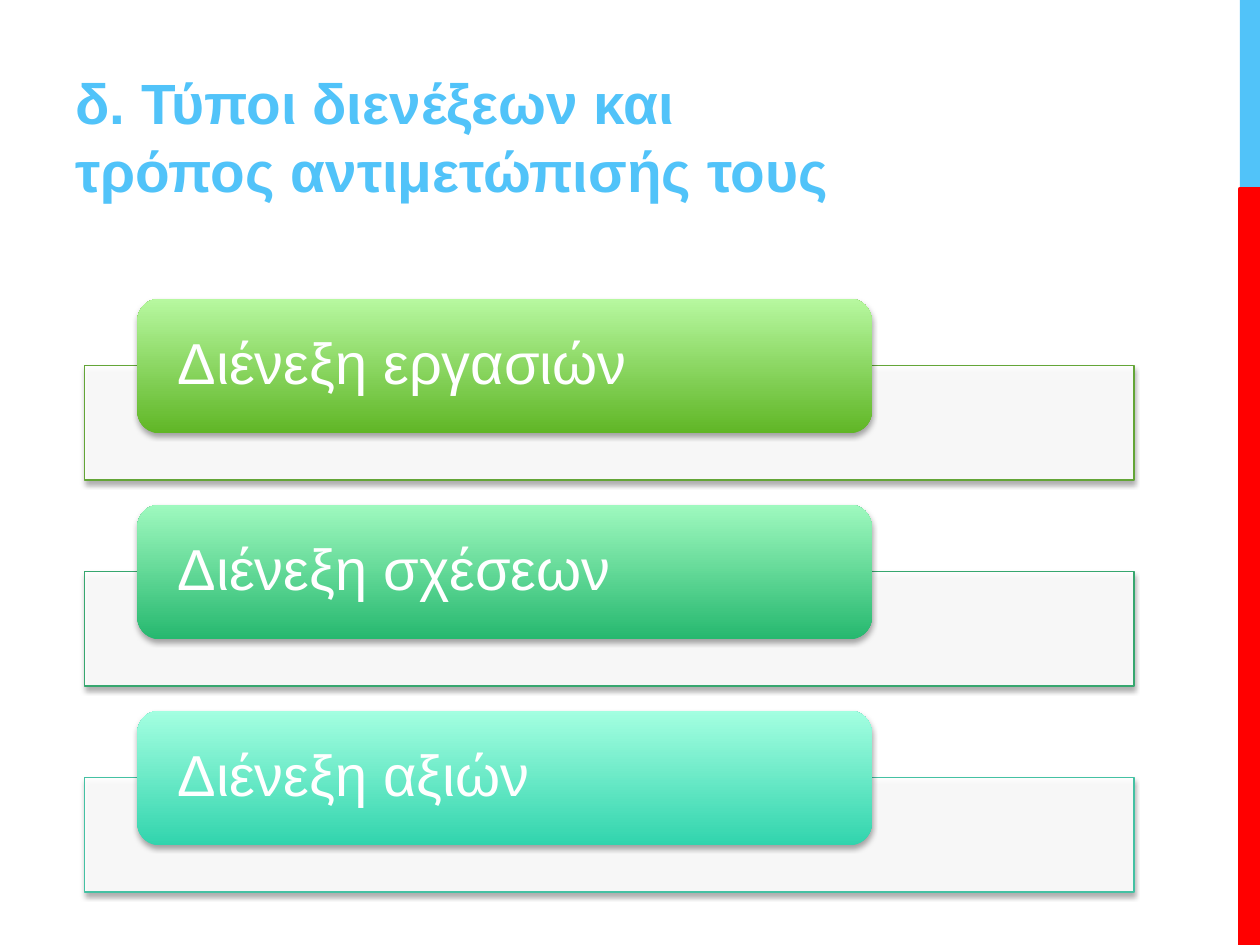
from lxml import etree
from pptx import Presentation
from pptx.dml.color import RGBColor
from pptx.enum import shapes, text
from pptx.oxml import ns
from pptx.util import Inches, Pt

HEADING = "δ. Τύποι διενέξεων και τρόπος αντιμετώπισής τους"
# label, outline of the bar, bottom and top colour of the pill
CONFLICTS = [
    ("Διένεξη εργασιών", "63A537", "60B626", "B7F8A0"),
    ("Διένεξη σχέσεων", "37A76F", "26B86F", "9FF9BF"),
    ("Διένεξη αξιών", "44C1A3", "31D4AD", "A4FFE1"),
]
THEME = {
    "accent": "51C3F9", "stripe": "FF0000", "light": "FFFFFF", "shadow": "000000",
    "heading": {"name": "Arial", "size": Pt(32.4), "bold": True},
    "label": {"name": "Arial", "size": Pt(33), "bold": False},
}
FIRST_PILL, STEP, BAR_DROP = 2.37, 1.635, 0.53


def rgb(key):
    return RGBColor.from_string(THEME.get(key, key))


def set_all(target, values):
    for name, value in values.items():
        setattr(target, name, value)


def add_box(slide, kind, *box):
    shape = slide.shapes.add_shape(kind, *map(Inches, box))
    shape.shadow.inherit = False
    shape.line.fill.background()
    return shape


def fill_solid(shape, color):
    shape.fill.solid()
    shape.fill.fore_color.rgb = rgb(color)


def outline(shape, color, width):
    shape.line.color.rgb = rgb(color)
    shape.line.width = Pt(width)


def add_color_alpha(color_element, percent):
    etree.SubElement(color_element, ns.qn("a:alpha"), val=str(percent * 1000))


def drop_shadow(shape):
    effects = shape._element.spPr.find(ns.qn("a:effectLst"))
    shadow = etree.SubElement(
        effects, ns.qn("a:outerShdw"), blurRad=str(Pt(3.1)), dist=str(Pt(1.8)),
        dir=str(90 * 60000), rotWithShape="0")
    color = etree.SubElement(shadow, ns.qn("a:srgbClr"), val=THEME["shadow"])
    add_color_alpha(color, 35)


def write(frame, words, style, color):
    paragraph = frame.paragraphs[0]
    paragraph.alignment = text.PP_ALIGN.LEFT
    run = paragraph.add_run()
    run.text = words
    set_all(run.font, THEME[style])
    run.font.color.rgb = rgb(color)
    return paragraph


def add_heading(slide):
    heading = slide.shapes.title
    set_all(heading, {"left": Inches(0.5), "top": Inches(0.17),
                      "width": Inches(6.33), "height": Inches(1.5)})
    set_all(heading.text_frame, {"word_wrap": True,
                                 "auto_size": text.MSO_AUTO_SIZE.NONE,
                                 "vertical_anchor": text.MSO_ANCHOR.BOTTOM})
    write(heading.text_frame, HEADING, "heading", "accent")


def add_conflict(slide, top, label, edge, dark, pale):
    bar = add_box(slide, shapes.MSO_SHAPE.RECTANGLE, 0.67, top + BAR_DROP, 8.33, 0.91)
    fill_solid(bar, "light")
    add_color_alpha(bar._element.spPr.find(".//" + ns.qn("a:srgbClr")), 90)
    outline(bar, edge, 0.75)

    pill = add_box(slide, shapes.MSO_SHAPE.ROUNDED_RECTANGLE, 1.09, top, 5.83, 1.07)
    pill.fill.gradient()
    pill.fill.gradient_angle = 90
    for stop, color, position in zip(pill.fill.gradient_stops, (dark, pale), (0, 1)):
        stop.color.rgb = rgb(color)
        stop.position = position
    set_all(pill.text_frame, {
        "word_wrap": True, "vertical_anchor": text.MSO_ANCHOR.MIDDLE,
        "margin_left": Inches(0.27), "margin_right": Inches(0.27),
        "margin_top": 0, "margin_bottom": 0})
    write(pill.text_frame, label, "label", "light").line_spacing = 0.9

    for shape in (bar, pill):
        drop_shadow(shape)


def main():
    deck = Presentation()
    set_all(deck, {"slide_width": Inches(10), "slide_height": Inches(7.5)})
    slide = deck.slides.add_slide(deck.slide_layouts[5])
    for color, top, height in (("accent", 0, 1.5), ("stripe", 1.5, 6)):
        band = add_box(slide, shapes.MSO_SHAPE.RECTANGLE, 9.84, top, 0.16, height)
        fill_solid(band, color)
    outline(band, "stripe", 2.25)
    add_heading(slide)
    for row, conflict in enumerate(CONFLICTS):
        add_conflict(slide, FIRST_PILL + row * STEP, *conflict)
    deck.save("out.pptx")


if __name__ == "__main__":
    main()
